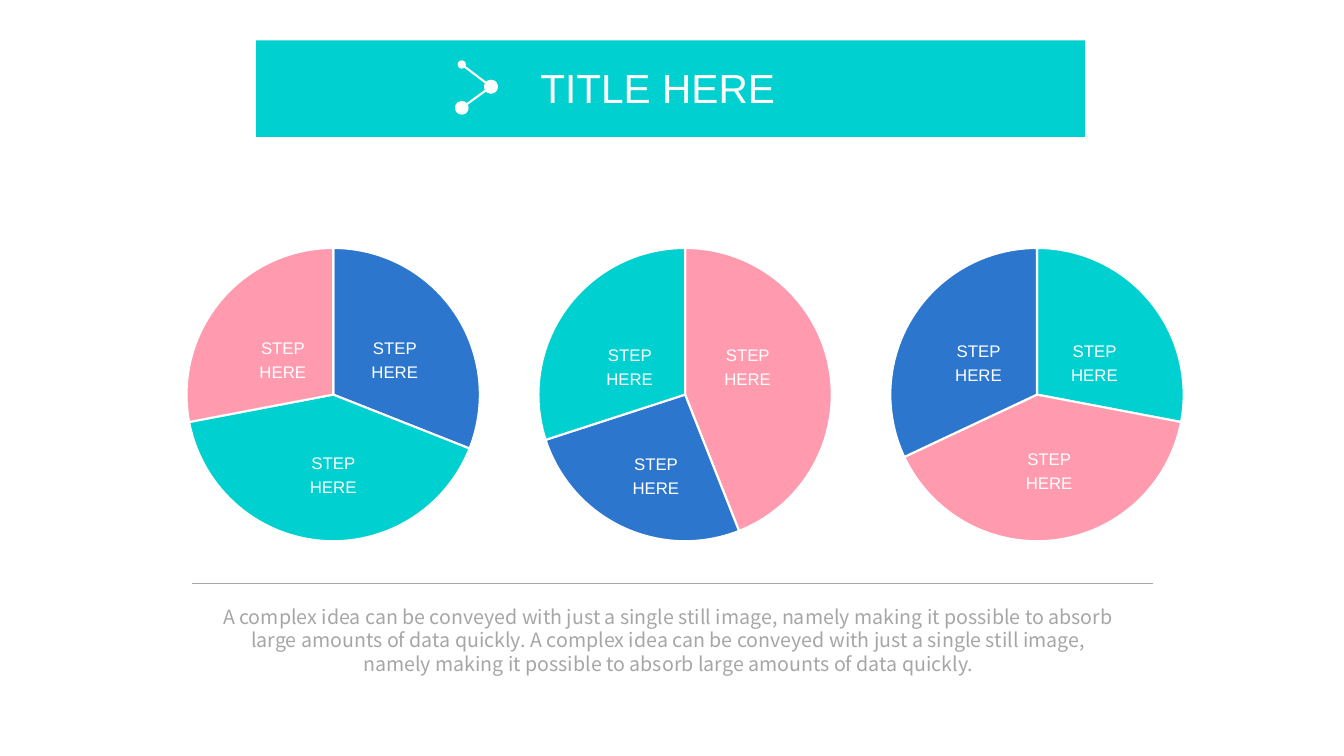
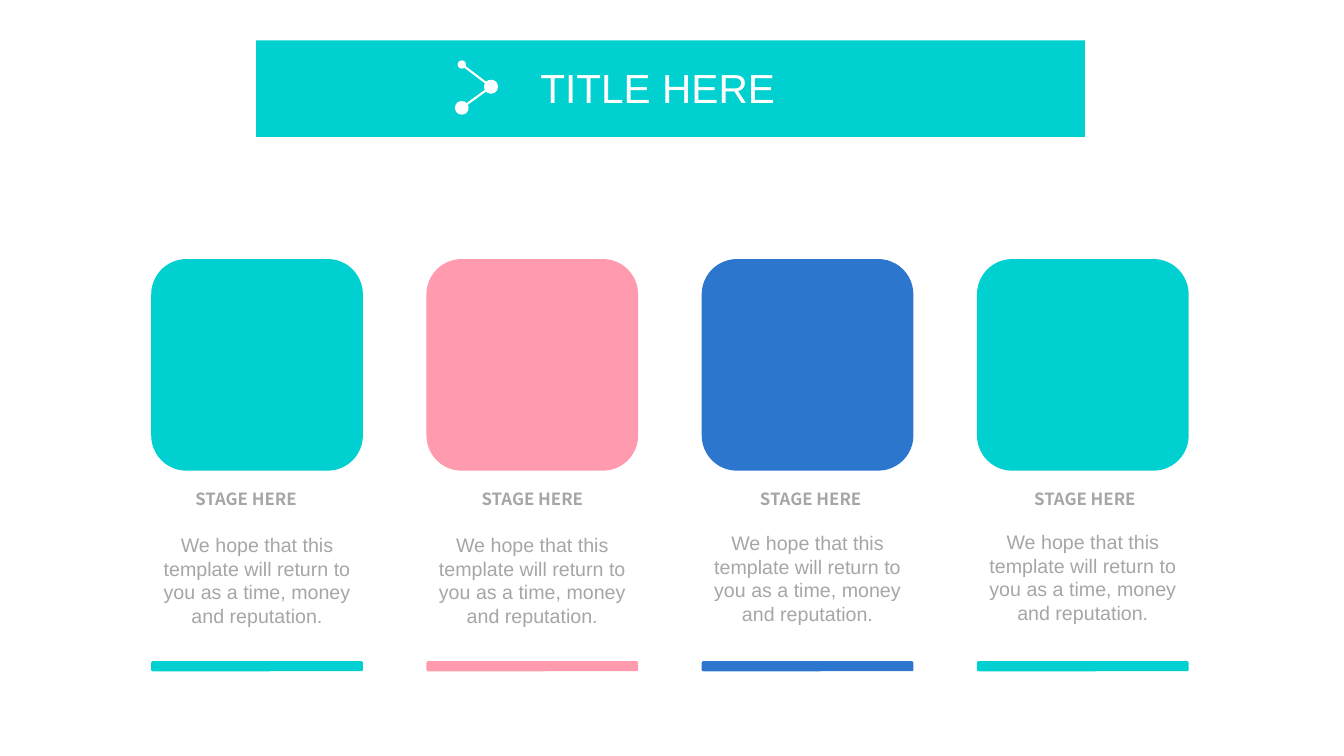
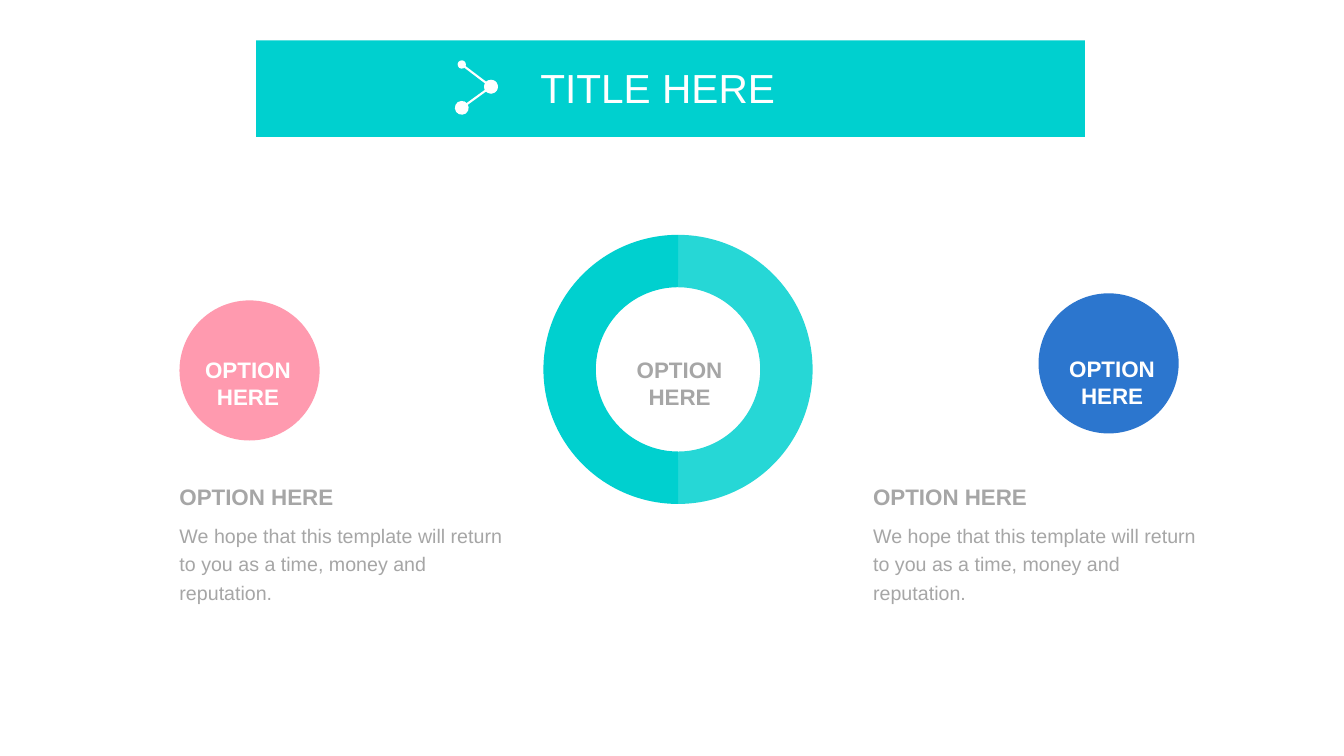
from dataclasses import dataclass

import pptx
import pptx.chart.data
import pptx.dml.color
import pptx.enum.chart
import pptx.enum.shapes
import pptx.enum.text
import pptx.oxml
import pptx.oxml.ns
import pptx.util
from pptx.util import Inches

SHAPE = pptx.enum.shapes.MSO_SHAPE
ALIGN = pptx.enum.text.PP_ALIGN


@dataclass(frozen=True)
class Theme:
    teal: str = "00D0CF"
    pink: str = "FF9AAF"
    blue: str = "2C76CE"
    grey: str = "A6A6A6"
    white: str = "FFFFFF"
    black: str = "000000"
    sans: str = "Arial"
    humanist: str = "Noto Sans CJK SC"
    title: int = 29
    heading: int = 16
    body: int = 14
    label: int = 12
    chart: int = 10
    leading: float = 1.2
    loose: float = 1.44


THEME = Theme()
NO_INSET = (0, 0)

TITLE = "TITLE HERE"
STEP = "STEP HERE"
STAGE = "STAGE HERE"
OPTION = "OPTION HERE"
PROMISE = "We hope that this template will return to you as a time, money and reputation."
IDEA = ("A complex idea can be conveyed with just a single still image, "
        "namely making it possible to absorb large amounts of data quickly.")

# Values, slice colours, and the left and top of each slice label
PIES = [
    ((31, 41, 28, None), (THEME.blue, THEME.teal, THEME.pink, THEME.pink),
     ((3.44, 3.26), (2.83, 4.4), (2.33, 3.26))),
    ((44, 26, 30, None), (THEME.pink, THEME.blue, THEME.teal, THEME.teal),
     ((6.94, 3.33), (6.03, 4.41), (5.77, 3.33))),
    ((28, 40, 32, None), (THEME.teal, THEME.pink, THEME.blue, THEME.pink),
     ((10.38, 3.29), (9.93, 4.36), (9.23, 3.29))),
]

# Colour, left of the stage label, top of the body text
STAGES = [
    (THEME.teal, 1.88, 5.24),
    (THEME.pink, 4.72, 5.24),
    (THEME.blue, 7.48, 5.22),
    (THEME.teal, 10.2, 5.21),
]

# Colour, circle left and top, circle label left and top, text left
OPTIONS = [
    (THEME.pink, 1.78, 2.98, 1.71, 3.53, 1.78),
    (THEME.blue, 10.3, 2.91, 10.28, 3.52, 8.66),
]


def rgb(value):
    return pptx.dml.color.RGBColor.from_string(value)


def add_text(slide, text, left, top, width, height, size=THEME.body, color=THEME.grey,
             font=THEME.sans, bold=False, align=ALIGN.CENTER, inset=(0.1, 0.05),
             leading=THEME.leading, wrap=True):
    box = slide.shapes.add_textbox(Inches(left), Inches(top), Inches(width), Inches(height))
    frame = box.text_frame
    frame.word_wrap = wrap
    if not wrap:
        frame.auto_size = pptx.enum.text.MSO_AUTO_SIZE.SHAPE_TO_FIT_TEXT
    frame.margin_left = frame.margin_right = Inches(inset[0])
    frame.margin_top = frame.margin_bottom = Inches(inset[1])
    para = frame.paragraphs[0]
    para.alignment = align
    para.line_spacing = pptx.util.Pt(round(size * leading, 1))
    span = para.add_run()
    span.text = text
    span.font.size = pptx.util.Pt(size)
    span.font.name = font
    span.font.bold = bold
    span.font.color.rgb = rgb(color)


def add_block(slide, kind, left, top, width, height, color):
    block = slide.shapes.add_shape(kind, Inches(left), Inches(top), Inches(width), Inches(height))
    block.shadow.inherit = False
    block.fill.solid()
    block.fill.fore_color.rgb = rgb(color)
    block.line.fill.background()
    return block


def add_line(slide, start, end, color, weight, ends=()):
    """Draw a straight line; ends holds the oval sizes at its start and end."""
    line = slide.shapes.add_connector(pptx.enum.shapes.MSO_CONNECTOR.STRAIGHT,
                                      *(Inches(value) for value in start + end))
    line.line.color.rgb = rgb(color)
    line.line.width = pptx.util.Pt(weight)
    outline = line.line._get_or_add_ln()
    for tag, size in zip(("a:headEnd", "a:tailEnd"), ends):
        oval = pptx.oxml.ns.qn(tag)
        outline.append(outline.makeelement(oval, {"type": "oval", "w": size, "len": size}))
    properties = line._element.spPr
    properties.append(properties.makeelement(pptx.oxml.ns.qn("a:effectLst"), {}))


def add_page(deck):
    """Add a blank page with the title band and its linked-dots icon."""
    page = deck.slides.add_slide(deck.slide_layouts[6])
    add_block(page, SHAPE.RECTANGLE, 2.54, 0.4, 8.22, 0.96, THEME.teal)
    add_text(page, TITLE, 5.26, 0.58, 2.55, 0.59, size=THEME.title, color=THEME.white,
             align=ALIGN.LEFT, wrap=False)
    joint = (4.87, 0.86)
    add_line(page, (4.58, 0.64), joint, THEME.white, 1.5, ("med", "lg"))
    add_line(page, joint, (4.58, 1.07), THEME.white, 1.5, ("lg", "lg"))
    return page


def set_plot_area(chart, left, top, width, height):
    """Fix the inner plot area, in fractions of the chart's size."""
    plot_area = chart._chartSpace.chart.plotArea
    for old in plot_area.findall(pptx.oxml.ns.qn("c:layout")):
        plot_area.remove(old)
    sizes = "".join(f'<c:{tag} val="{value}"/>'
                    for tag, value in zip("xywh", (left, top, width, height)))
    plot_area.insert(0, pptx.oxml.parse_xml(
        f'<c:layout {pptx.oxml.ns.nsdecls("c")}><c:manualLayout>'
        '<c:layoutTarget val="inner"/><c:xMode val="edge"/><c:yMode val="edge"/>'
        f'{sizes}</c:manualLayout></c:layout>'))


def add_pie(slide, left, values, colors):
    width, height, diameter = 3.69, 3.19, 2.91
    data = pptx.chart.data.CategoryChartData()
    data.categories = ["1", "2", "3", "4"]
    data.add_series("Series 1", values)
    chart = slide.shapes.add_chart(
        pptx.enum.chart.XL_CHART_TYPE.PIE, Inches(left), Inches(2.32),
        Inches(width), Inches(height), data).chart
    chart.has_legend = False
    chart.has_title = False
    chart.font.size = pptx.util.Pt(THEME.chart)
    chart.font.name = THEME.sans
    chart.font.color.rgb = rgb(THEME.black)
    plot = chart.plots[0]
    plot.vary_by_categories = True
    for index, color in enumerate(colors):
        piece = plot.series[0].points[index].format
        piece.fill.solid()
        piece.fill.fore_color.rgb = rgb(color)
        piece.line.color.rgb = rgb(THEME.white)
        piece.line.width = pptx.util.Pt(1.5)
    across, down = diameter / width, diameter / height
    set_plot_area(chart, (1 - across) / 2, (1 - down) / 2, across, down)


def build_pies(deck):
    page = add_page(deck)
    for index, (values, colors, labels) in enumerate(PIES):
        add_pie(page, 1.46 + 3.49 * index, values, colors)
        for left, top in labels:
            add_text(page, STEP, left, top, 0.95, 0.59, size=THEME.label,
                     color=THEME.white, leading=THEME.loose)
    add_line(page, (1.9, 5.79), (11.44, 5.79), THEME.grey, 1.25)
    add_text(page, f"{IDEA} {IDEA}", 2.04, 5.93, 9.18, 0.84, font=THEME.humanist,
             inset=(0.13, 0.07))


def build_stages(deck):
    page = add_page(deck)
    side, pitch = 2.1, 2.73
    for index, (color, label_left, body_top) in enumerate(STAGES):
        left = 1.5 + pitch * index
        add_block(page, SHAPE.ROUNDED_RECTANGLE, left, 2.57, side, side, color)
        add_text(page, STAGE, label_left, 4.85, 1.12, 0.34, size=THEME.label,
                 font=THEME.humanist, bold=True, inset=NO_INSET)
        add_text(page, PROMISE, left, body_top, side, 1.04)
        add_block(page, SHAPE.ROUNDED_RECTANGLE, left, 6.56, side, 0.1, color)


def add_half_ring(slide, start, end):
    """Draw the ring's arc clockwise between two angles in degrees."""
    arc = add_block(slide, SHAPE.BLOCK_ARC, 5.39, 2.33, 2.67, 2.67, THEME.teal)
    # Angles are stored in 60000ths of a degree, adjustments in 100000ths
    arc.adjustments[0] = start * 0.6
    arc.adjustments[1] = end * 0.6
    arc.adjustments[2] = 0.52 / 2.67
    return arc


def build_options(deck):
    page = add_page(deck)
    light_half = add_half_ring(page, 270, 90)
    shade = light_half._element.spPr.find(".//" + pptx.oxml.ns.qn("a:srgbClr"))
    shade.append(shade.makeelement(pptx.oxml.ns.qn("a:alpha"), {"val": "85000"}))
    add_half_ring(page, 90, 270)

    heading = dict(size=THEME.heading, bold=True, inset=NO_INSET)
    add_text(page, OPTION, 5.99, 3.53, 1.5, 0.54, **heading)
    for color, left, top, label_left, label_top, text_left in OPTIONS:
        add_block(page, SHAPE.OVAL, left, top, 1.39, 1.39, color)
        add_text(page, OPTION, label_left, label_top, 1.5, 0.54, color=THEME.white, **heading)
        add_text(page, OPTION, text_left, 4.79, 2.14, 0.27, align=ALIGN.LEFT, **heading)
        add_text(page, PROMISE, text_left, 5.15, 3.29, 0.85, align=ALIGN.LEFT,
                 inset=NO_INSET, leading=THEME.loose)


def main():
    deck = pptx.Presentation()
    deck.slide_width, deck.slide_height = Inches(13.33), Inches(7.5)
    build_pies(deck)
    build_stages(deck)
    build_options(deck)
    deck.save("out.pptx")


if __name__ == "__main__":
    main()
